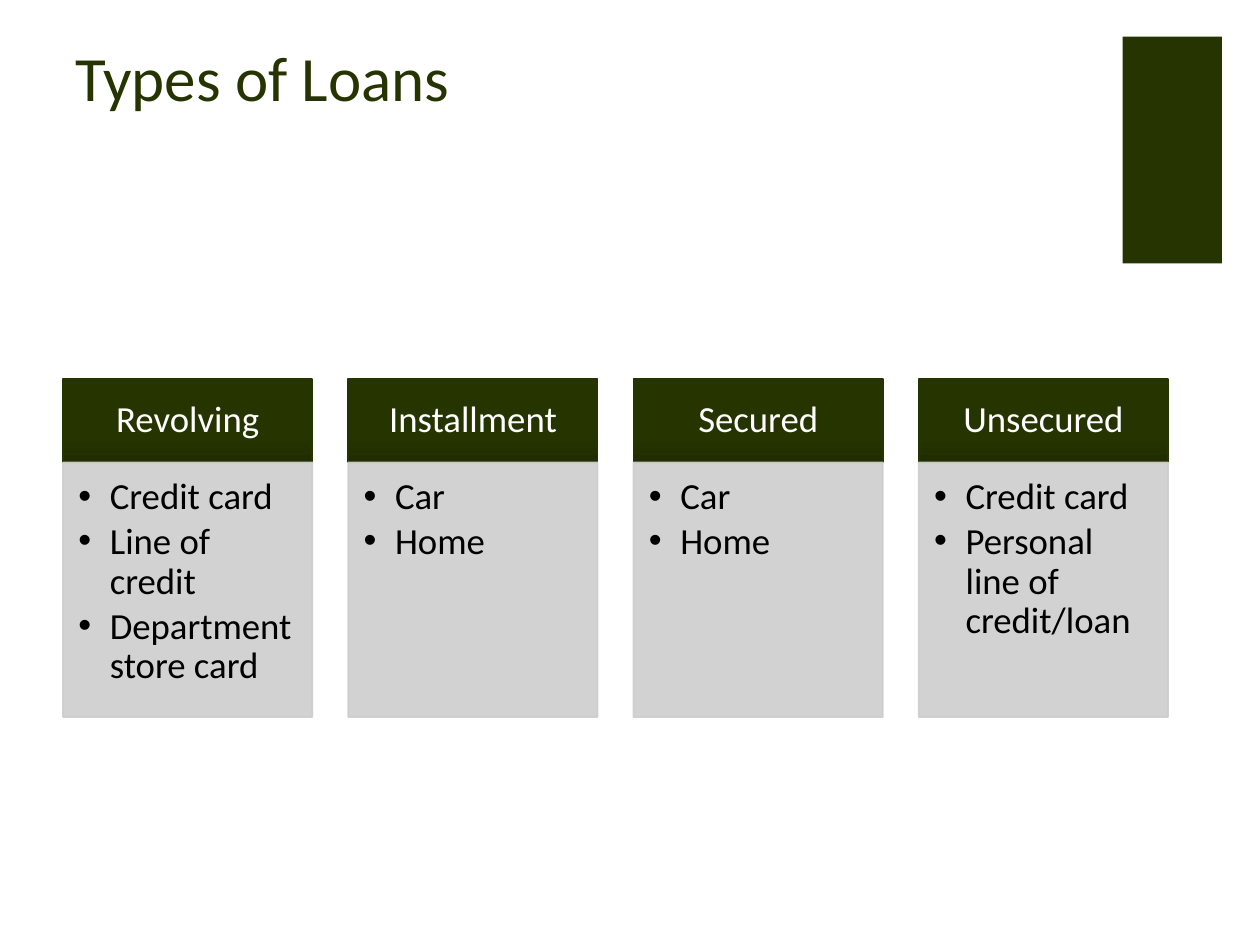
"""Build the "Types of Loans" slide: four loan types with examples of each."""
import pptx
import pptx.dml.color
import pptx.enum.shapes
import pptx.enum.text
import pptx.oxml.ns
import lxml.etree

Pt = pptx.util.Pt
RGB = pptx.dml.color.RGBColor.from_string
ALIGN = pptx.enum.text.PP_ALIGN
ANCHOR = pptx.enum.text.MSO_ANCHOR
qn = pptx.oxml.ns.qn

COLORS = {
    "green": "263401",
    "header_base": "212D00",
    "header": "263500",
    "body": "CDCECC",
    "header_text": "FFFFFF",
    "body_text": "000000",
}
LOANS = {
    "Revolving": ["Credit card", "Line of credit", "Department store card"],
    "Installment": ["Car", "Home"],
    "Secured": ["Car", "Home"],
    "Unsecured": ["Credit card", "Personal line of credit/loan"],
}
TITLE_FRAME = {"margin_top": 0, "margin_bottom": Pt(1.4), "word_wrap": True,
               "vertical_anchor": ANCHOR.BOTTOM,
               "auto_size": pptx.enum.text.MSO_AUTO_SIZE.NONE}
HEADER_FRAME = {"margin_left": Pt(11.5), "margin_right": Pt(11.5),
                "margin_top": Pt(6.5), "margin_bottom": Pt(6.5),
                "word_wrap": True, "vertical_anchor": ANCHOR.MIDDLE}
BODY_FRAME = {"margin_left": Pt(8.75), "margin_right": Pt(11.5),
              "margin_top": Pt(8.75), "margin_bottom": Pt(13),
              "word_wrap": True, "vertical_anchor": ANCHOR.TOP}
LEFT, PITCH, WIDTH = 36, 163, 142.5
HEADER_TOP, HEADER_HEIGHT, BODY_HEIGHT = 216.75, 47.5, 145.5


def add_block(left, top, width, height, color):
    block = slide.shapes.add_shape(
        pptx.enum.shapes.MSO_SHAPE.RECTANGLE, Pt(left), Pt(top), Pt(width), Pt(height))
    block.shadow.inherit = False
    block.fill.solid()
    block.fill.fore_color.rgb = RGB(COLORS[color])
    block.line.color.rgb = RGB(COLORS[color])
    block.line.width = Pt(1)
    return block


def write_lines(frame, lines, frame_format, size, color, align, space_after=0):
    for name, value in frame_format.items():
        setattr(frame, name, value)
    frame.text = "\n".join(lines)
    paragraph_format = {"alignment": align, "line_spacing": 0.9,
                        "space_before": Pt(0), "space_after": Pt(space_after)}
    for paragraph in frame.paragraphs:
        for name, value in paragraph_format.items():
            setattr(paragraph, name, value)
        font = paragraph.runs[0].font
        font.name, font.size = "Calibri", Pt(size)
        font.color.rgb = RGB(COLORS[color])


deck = pptx.Presentation()
deck.slide_width, deck.slide_height = Pt(720), Pt(540)
slide = deck.slides.add_slide(deck.slide_layouts[5])

accent = add_block(641.5, 21, 56.75, 129.5, "green")
accent.line.fill.background()

title = slide.shapes.title
title.left, title.top, title.width, title.height = Pt(36), Pt(25.25), Pt(512.5), Pt(41.75)
write_lines(title.text_frame, ["Types of Loans"], TITLE_FRAME, 36, "green", ALIGN.LEFT)

for column, (loan_type, examples) in enumerate(LOANS.items()):
    left = LEFT + column * PITCH

    header = add_block(left, HEADER_TOP, WIDTH, HEADER_HEIGHT, "green")
    header.fill.gradient()
    header.fill.gradient_angle = 90
    stops = zip(header.fill.gradient_stops, (0, 0.35), ("header_base", "header"))
    for stop, position, color in stops:
        stop.position = position
        stop.color.rgb = RGB(COLORS[color])
    write_lines(header.text_frame, [loan_type], HEADER_FRAME, 21, "header_text", ALIGN.CENTER)

    body = add_block(left, HEADER_TOP + HEADER_HEIGHT, WIDTH, BODY_HEIGHT, "body")
    for tint in body.element.spPr.iter(qn("a:srgbClr")):
        lxml.etree.SubElement(tint, qn("a:alpha"), val="90000")
    write_lines(body.text_frame, examples, BODY_FRAME, 21, "body_text", ALIGN.LEFT, 3)
    for paragraph in body.text_frame.paragraphs:
        properties = paragraph._p.get_or_add_pPr()
        properties.set("marL", str(Pt(18)))
        properties.set("indent", str(-Pt(18)))
        lxml.etree.SubElement(properties, qn("a:buFont"), typeface="Arial")
        lxml.etree.SubElement(properties, qn("a:buChar"), char="•")

deck.save("out.pptx")
